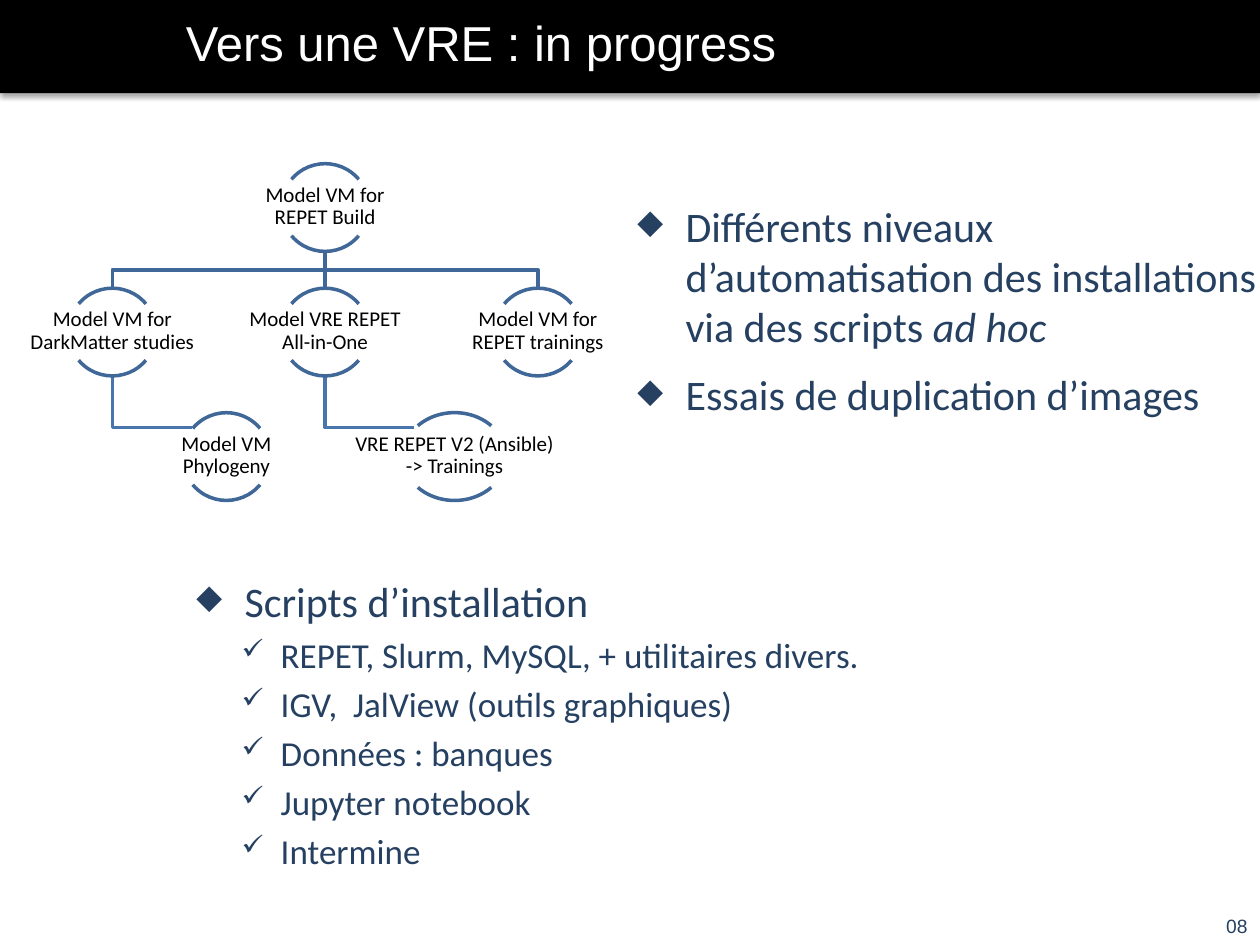
from dataclasses import dataclass

from lxml import etree
from pptx import Presentation
from pptx.dml.color import RGBColor
from pptx.enum.shapes import MSO_CONNECTOR, MSO_SHAPE
from pptx.enum.text import MSO_ANCHOR, PP_ALIGN
from pptx.oxml.ns import qn
from pptx.util import Cm, Pt

ARC, RECT = MSO_SHAPE.ARC, MSO_SHAPE.RECTANGLE
STRAIGHT = MSO_CONNECTOR.STRAIGHT
MIDDLE = MSO_ANCHOR.MIDDLE
CENTER, RIGHT = PP_ALIGN.CENTER, PP_ALIGN.RIGHT


@dataclass(frozen=True)
class Theme:
    """Colours, fonts and type sizes of the slide."""
    bar: RGBColor = RGBColor(0, 0, 0)
    title: RGBColor = RGBColor(255, 255, 255)
    text: RGBColor = RGBColor(0x25, 0x40, 0x61)
    label: RGBColor = RGBColor(0, 0, 0)
    arc: RGBColor = RGBColor(0x3F, 0x67, 0x97)
    branch: RGBColor = RGBColor(0x48, 0x75, 0xAC)
    head_font: str = "Arial"
    body_font: str = "Calibri"
    title_size: int = 28
    level_sizes: tuple = (24, 20)
    label_size: int = 12
    number_size: int = 11
    line: int = 2


T = Theme()
LEVELS = (("◆", 0.97, -0.97, 10), ("✓", 1.7, -0.79, 4))
DIAMETER, LABEL_W, LABEL_H, LABEL_DROP = 1.77, 3.53, 1.14, 0.3
COLUMN, ROW = 4.29, 2.51
ARC_ANGLES = ((132, 192), (24, 84))


def add_text_frame(shapes, x, y, w, h):
    """Add a wrapping text box and return its text frame."""
    tf = shapes.add_textbox(Cm(x), Cm(y), Cm(w), Cm(h)).text_frame
    tf.word_wrap = True
    return tf


def add_run(p, text, font, size, color, italic=False):
    """Append one formatted run."""
    r = p.add_run()
    r.text = text
    r.font.name, r.font.size, r.font.italic = font, Pt(size), italic
    r.font.color.rgb = color


def style_line(shape, color):
    """Give a line or outline its colour and width."""
    shape.line.color.rgb = color
    shape.line.width = Pt(T.line)


def add_header(s, x, y, w, h, title):
    """Draw the shadowed bar and the slide title."""
    bar = s.shapes.add_shape(RECT, Cm(x), Cm(y), Cm(w), Cm(h))
    bar.shadow.inherit = False
    bar.fill.solid()
    bar.fill.fore_color.rgb = T.bar
    bar.line.fill.background()
    effects = bar._element.spPr.find(qn("a:effectLst"))
    shadow = etree.SubElement(effects, qn("a:outerShdw"), blurRad=str(Pt(3.1)),
                              dist=str(Pt(1.8)), dir="5400000", rotWithShape="0")
    color = etree.SubElement(shadow, qn("a:srgbClr"), val=str(T.bar))
    etree.SubElement(color, qn("a:alpha"), val="35000")
    p = add_text_frame(s.shapes, x + 3.5, y + 0.36, 18.2, 1.2).paragraphs[0]
    p.line_spacing = 0.8
    add_run(p, title, T.head_font, T.title_size, T.title)


def add_bullets(s, x, y, w, h, items):
    """Write bullets from (level, [(text, italic), ...]) items."""
    tf = add_text_frame(s.shapes, x, y, w, h)
    for i, (level, runs) in enumerate(items):
        p = tf.add_paragraph() if i else tf.paragraphs[0]
        char, margin, indent, before = LEVELS[level]
        p.level = level
        pPr = p._p.get_or_add_pPr()
        pPr.set("marL", str(Cm(margin)))
        pPr.set("indent", str(Cm(indent)))
        etree.SubElement(pPr, qn("a:buSzPct"), val="80000")
        etree.SubElement(pPr, qn("a:buChar"), char=char)
        p.space_before = Pt(before if i else 0)
        for text, italic in runs:
            add_run(p, text, T.body_font, T.level_sizes[level], T.text, italic)


def add_node(shapes, cx, y, text, diameter=DIAMETER, label_w=LABEL_W):
    """Draw a label between an upper and a lower arc."""
    for angles in ARC_ANGLES:
        arc = shapes.add_shape(ARC, Cm(cx - diameter / 2), Cm(y),
                               Cm(diameter), Cm(DIAMETER))
        arc.adjustments[0], arc.adjustments[1] = angles
        arc.shadow.inherit = False
        arc.fill.background()
        style_line(arc, T.arc)
    tf = add_text_frame(shapes, cx - label_w / 2, y + LABEL_DROP, label_w, LABEL_H)
    tf.margin_left = tf.margin_right = tf.margin_top = tf.margin_bottom = Cm(0.03)
    tf.vertical_anchor = MIDDLE
    p = tf.paragraphs[0]
    p.alignment, p.line_spacing = CENTER, 0.9
    add_run(p, text, T.body_font, T.label_size, T.label)


def add_branch(shapes, points, color):
    """Draw a bent branch through the given points."""
    start, *rest = [(Cm(x), Cm(y)) for x, y in points]
    builder = shapes.build_freeform(*start)
    builder.add_line_segments(rest, close=False)
    branch = builder.convert_to_shape()
    branch.shadow.inherit = False
    branch.fill.background()
    style_line(branch, color)


def add_tree(s, x, y, root, models, children):
    """Draw the tree: a root, a row of models and their children."""
    shapes = s.shapes.add_group_shape().shapes
    centers = [x + LABEL_W / 2 + i * COLUMN for i in range(len(models))]
    root_x = centers[len(centers) // 2]
    root_end, model_y = y + DIAMETER, y + ROW
    middle = (root_end + model_y) / 2
    for cx in centers:
        if cx == root_x:
            trunk = shapes.add_connector(STRAIGHT, Cm(cx), Cm(root_end),
                                         Cm(cx), Cm(model_y))
            style_line(trunk, T.arc)
            etree.SubElement(trunk._element.spPr, qn("a:effectLst"))
        else:
            add_branch(shapes, [(root_x, root_end), (root_x, middle),
                                (cx, middle), (cx, model_y)], T.arc)
    child_y = y + 2 * ROW
    for parent, offset, text, diameter, label_w in children:
        px, cx = centers[parent], centers[parent] + offset
        bend = child_y + LABEL_DROP
        add_branch(shapes, [(px, model_y + DIAMETER), (px, bend),
                            (cx - 0.39 * diameter, bend)], T.branch)
        add_node(shapes, cx, child_y, text, diameter, label_w)
    add_node(shapes, root_x, y, root)
    for cx, text in zip(centers, models):
        add_node(shapes, cx, model_y, text)


def add_page_number(s, x, y, w, h, number):
    """Write the page number at the right of its box."""
    p = add_text_frame(s.shapes, x, y, w, h).paragraphs[0]
    p.alignment = RIGHT
    add_run(p, number, T.head_font, T.number_size, T.text)


def main():
    """Build and save the slide."""
    prs = Presentation()
    prs.slide_width, prs.slide_height = Cm(25.4), Cm(19.05)
    s = prs.slides.add_slide(prs.slide_layouts[6])
    add_header(s, 0, 0, 25.4, 1.88, "Vers une VRE : in progress")
    add_bullets(s, 12.6, 3.91, 13.31, 7.92, [
        (0, [("Différents niveaux d’automatisation des installations "
              "via des scripts ", False), ("ad hoc", True)]),
        (0, [("Essais de duplication d’images", False)]),
    ])
    add_tree(s, 0.5, 3.3, "Model VM for REPET Build",
             ["Model VM for DarkMatter studies", "Model VRE REPET All-in-One",
              "Model VM for REPET trainings"],
             [(0, 2.3, "Model VM Phylogeny", DIAMETER, LABEL_W),
              (1, 2.61, "VRE REPET V2 (Ansible) -> Trainings", 2.08, 4.14)])
    scripts = ["REPET, Slurm, MySQL, + utilitaires divers.",
               "IGV,  JalView (outils graphiques)", "Données : banques",
               "Jupyter notebook", "Intermine"]
    add_bullets(s, 3.71, 11.48, 16.76, 7.92,
                [(0, [("Scripts d’installation", False)])]
                + [(1, [(text, False)]) for text in scripts])
    add_page_number(s, 24.1, 18.31, 1.3, 0.74, "08")
    prs.save("out.pptx")


if __name__ == "__main__":
    main()
